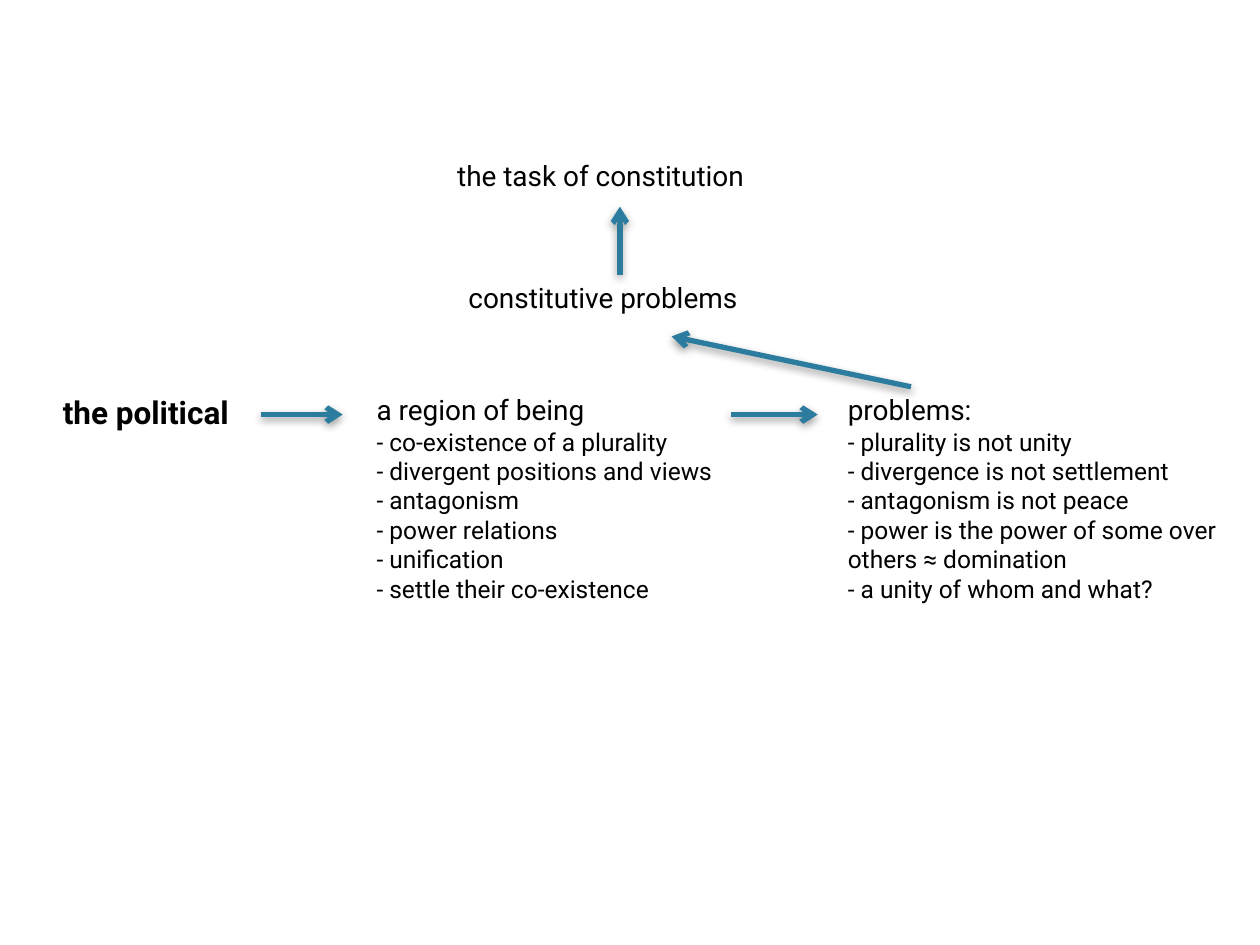
from dataclasses import dataclass

from lxml.etree import SubElement
from pptx import Presentation
from pptx.dml.color import RGBColor as Rgb
from pptx.enum.shapes import MSO_CONNECTOR as Connector
from pptx.enum.text import MSO_AUTO_SIZE as AutoSize
from pptx.oxml.ns import qn
from pptx.util import Inches, Pt


@dataclass(frozen=True)
class Theme:
    font: str = "Roboto"
    ink: str = "000000"
    arrow: str = "2C7C9F"
    term: int = 18
    heading: int = 16
    item: int = 14
    stroke: int = 3
    shadow_blur: int = 5
    shadow_drop: int = 2
    shadow_percent: int = 40


THEME = Theme()
WIDTH, HEIGHT = Inches(10), Inches(7.5)

COLUMNS = {"term": 4, "task": 35.3, "constitutive": 36.2, "region": 28.9, "problems": 66.3}
ROWS = {"task": 16.13, "constitutive": 29.07, "main": 40.93}
ARROW_ROW = 43.87
RISE_COLUMN = 49.2

STATEMENTS = [
    ("term", "main", 16.7, 5.33, "the political", []),
    ("region", "main", 29.7, 26.93, "a region of being", [
        "co-existence of a plurality",
        "divergent positions and views",
        "antagonism",
        "power relations",
        "unification",
        "settle their co-existence",
    ]),
    ("problems", "main", 31.5, 23.73, "problems:", [
        "plurality is not unity",
        "divergence is not settlement",
        "antagonism is not peace",
        "power is the power of some over others ≈ domination",
        "a unity of whom and what?",
    ]),
    ("constitutive", "constitutive", 26.4, 4.93, "constitutive problems", []),
    ("task", "task", 27.9, 4.93, "the task of constitution", []),
]

STEPS = [
    ((20.7, ARROW_ROW), (27.2, ARROW_ROW)),
    ((58, ARROW_ROW), (64.9, ARROW_ROW)),
    ((72.3, ROWS["main"]), (53.3, 35.6)),
    ((RISE_COLUMN, ROWS["constitutive"]), (RISE_COLUMN, 21.87)),
]


def across(share):
    return round(WIDTH * share / 100)


def down(share):
    return round(HEIGHT * share / 100)


def write(paragraph, text, *, size, bold=False):
    run = paragraph.add_run()
    run.text = text
    run.font.name = THEME.font
    run.font.size = Pt(size)
    run.font.bold = bold
    run.font.color.rgb = Rgb.from_string(THEME.ink)


def add_statement(slide, column, row, width, height, heading, items):
    statement = slide.shapes.add_textbox(
        across(COLUMNS[column]), down(ROWS[row]), across(width), down(height))
    frame = statement.text_frame
    frame.word_wrap = True
    frame.auto_size = AutoSize.SHAPE_TO_FIT_TEXT
    is_term = column == "term"
    write(frame.paragraphs[0], heading,
          size=THEME.term if is_term else THEME.heading, bold=is_term)
    for item in items:
        write(frame.add_paragraph(), f"- {item}", size=THEME.item)


def add_step(slide, start, end):
    step = slide.shapes.add_connector(
        Connector.STRAIGHT, across(start[0]), down(start[1]), across(end[0]), down(end[1]))
    step.line.color.rgb = Rgb.from_string(THEME.arrow)
    step.line.width = Pt(THEME.stroke)
    SubElement(step.line._get_or_add_ln(), qn("a:tailEnd"), type="arrow")
    effects = SubElement(step._element.spPr, qn("a:effectLst"))
    shadow = SubElement(
        effects, qn("a:outerShdw"), blurRad=str(Pt(THEME.shadow_blur)),
        dist=str(Pt(THEME.shadow_drop)), dir=str(90 * 60000), rotWithShape="0")
    tint = SubElement(shadow, qn("a:srgbClr"), val=THEME.ink)
    SubElement(tint, qn("a:alpha"), val=str(THEME.shadow_percent * 1000))


def main():
    deck = Presentation()
    deck.slide_width, deck.slide_height = WIDTH, HEIGHT
    slide = deck.slides.add_slide(deck.slide_layouts[6])
    for statement in STATEMENTS:
        add_statement(slide, *statement)
    for start, end in STEPS:
        add_step(slide, start, end)
    deck.save("out.pptx")


if __name__ == "__main__":
    main()
